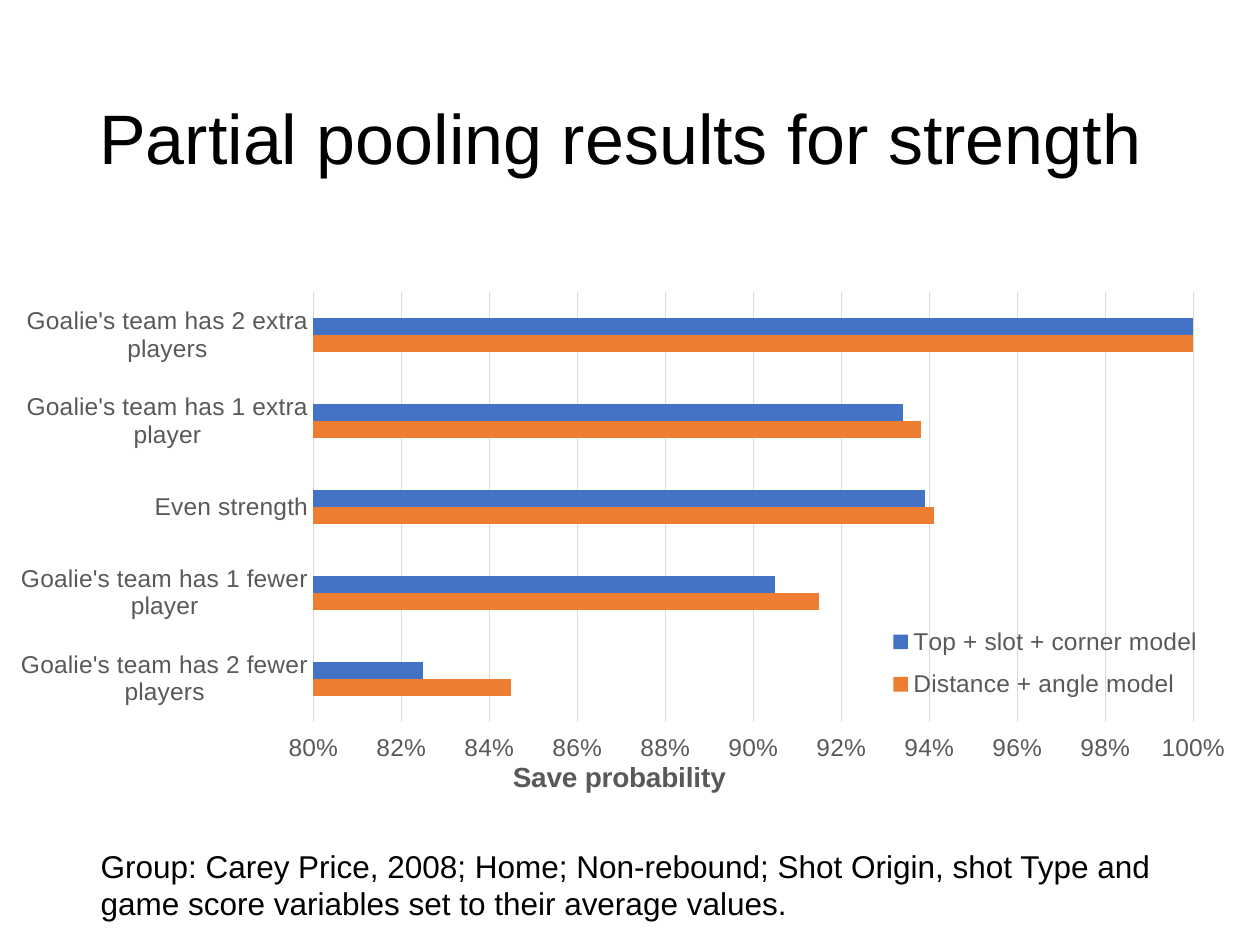
import lxml.etree
import pptx
import pptx.chart.data
import pptx.dml.color
import pptx.enum.chart
import pptx.enum.text
import pptx.oxml.ns
import pptx.util
from pptx.util import Inches

TITLE = "Partial pooling results for strength"
NOTE = (
    "Group: Carey Price, 2008; Home; Non-rebound; Shot Origin, shot Type and "
    "game score variables set to their average values."
)
AXIS_TITLE = "Save probability"
STRENGTHS = [
    "Goalie's team has 2 fewer players",
    "Goalie's team has 1 fewer player",
    "Even strength",
    "Goalie's team has 1 extra player",
    "Goalie's team has 2 extra players",
]
MODELS = [
    ("Distance + angle model", (0.845, 0.915, 0.941, 0.938, 1), "ED7D31"),
    ("Top + slot + corner model", (0.825, 0.905, 0.939, 0.934, 1), "4472C4"),
]
THEME = {
    "font": "Arial",
    "text": "000000",
    "chart_text": "595959",
    "line": "D9D9D9",
    "title_size": 40,
    "note_size": 18,
    "axis_title_size": 16,
    "label_size": 14,
}


def rgb(value):
    return pptx.dml.color.RGBColor.from_string(value)


def style_font(font, size, color, bold=False):
    font.name = THEME["font"]
    font.size = pptx.util.Pt(size)
    font.bold = bold
    font.color.rgb = rgb(color)


def style_line(line):
    line.color.rgb = rgb(THEME["line"])
    line.width = pptx.util.Pt(0.75)


def add_text(slide, text, box, size, anchor="TOP", spacing=1.0):
    shape = slide.shapes.add_textbox(*map(Inches, box))
    frame = shape.text_frame
    frame.word_wrap = True
    frame.vertical_anchor = getattr(pptx.enum.text.MSO_ANCHOR, anchor)
    paragraph = frame.paragraphs[0]
    paragraph.line_spacing = spacing
    run = paragraph.add_run()
    run.text = text
    style_font(run.font, size, THEME["text"])


def place(element, index, **settings):
    qn = pptx.oxml.ns.qn
    for previous in element.findall(qn("c:layout")):
        element.remove(previous)
    layout = lxml.etree.Element(qn("c:layout"))
    manual = lxml.etree.SubElement(layout, qn("c:manualLayout"))
    for name, value in settings.items():
        lxml.etree.SubElement(manual, qn("c:" + name)).set("val", str(value))
    element.insert(index, layout)


def add_save_chart(slide, box):
    data = pptx.chart.data.CategoryChartData(number_format="0%")
    data.categories = STRENGTHS
    for name, values, color in MODELS:
        data.add_series(name, values)
    kind = pptx.enum.chart.XL_CHART_TYPE.BAR_CLUSTERED
    chart = slide.shapes.add_chart(kind, *map(Inches, box), data).chart
    style_font(chart.font, THEME["label_size"], THEME["chart_text"])
    chart.has_title = False

    plot = chart.plots[0]
    plot.gap_width = 300
    plot.overlap = 0
    plot.vary_by_categories = False
    for series, (name, values, color) in zip(plot.series, MODELS):
        series.format.fill.solid()
        series.format.fill.fore_color.rgb = rgb(color)
        series.invert_if_negative = False
    place(chart._chartSpace.chart.plotArea, 0, layoutTarget="inner", xMode="edge",
          yMode="edge", x=0.241, y=0.036, w=0.72, h=0.821)

    tick_mark = pptx.enum.chart.XL_TICK_MARK
    strength_axis = chart.category_axis
    strength_axis.major_tick_mark = tick_mark.NONE
    strength_axis.has_major_gridlines = False
    style_line(strength_axis.format.line)

    save_axis = chart.value_axis
    save_axis.minimum_scale = 0.8
    save_axis.maximum_scale = 1
    save_axis.major_unit = 0.02
    save_axis.major_tick_mark = tick_mark.OUTSIDE
    save_axis.has_major_gridlines = True
    style_line(save_axis.major_gridlines.format.line)
    save_axis.format.line.fill.background()
    save_axis.tick_labels.number_format = "0%"
    save_axis.tick_labels.number_format_is_linked = False
    for axis in (strength_axis, save_axis):
        style_font(axis.tick_labels.font, THEME["label_size"], THEME["chart_text"])

    save_axis.has_title = True
    run = save_axis.axis_title.text_frame.paragraphs[0].add_run()
    run.text = AXIS_TITLE
    style_font(run.font, THEME["axis_title_size"], THEME["chart_text"], bold=True)
    place(save_axis.axis_title._element, 1, xMode="edge", yMode="edge", x=0.4, y=0.92)

    chart.has_legend = True
    legend = chart.legend
    legend.position = pptx.enum.chart.XL_LEGEND_POSITION.RIGHT
    legend.include_in_layout = True
    style_font(legend.font, THEME["label_size"], THEME["chart_text"])
    place(legend._element, 1, xMode="edge", yMode="edge", x=0.71, y=0.65, w=0.26, h=0.19)


def main():
    presentation = pptx.Presentation()
    presentation.slide_width = Inches(10)
    presentation.slide_height = Inches(7.5)
    slide = presentation.slides.add_slide(presentation.slide_layouts[6])
    add_text(slide, TITLE, (0.69, 0.4, 8.62, 1.45), THEME["title_size"],
             anchor="MIDDLE", spacing=0.9)
    add_text(slide, NOTE, (0.7, 6.67, 8.89, 0.71), THEME["note_size"])
    add_save_chart(slide, (0.15, 2.17, 9.7, 4.19))
    presentation.save("out.pptx")


if __name__ == "__main__":
    main()
